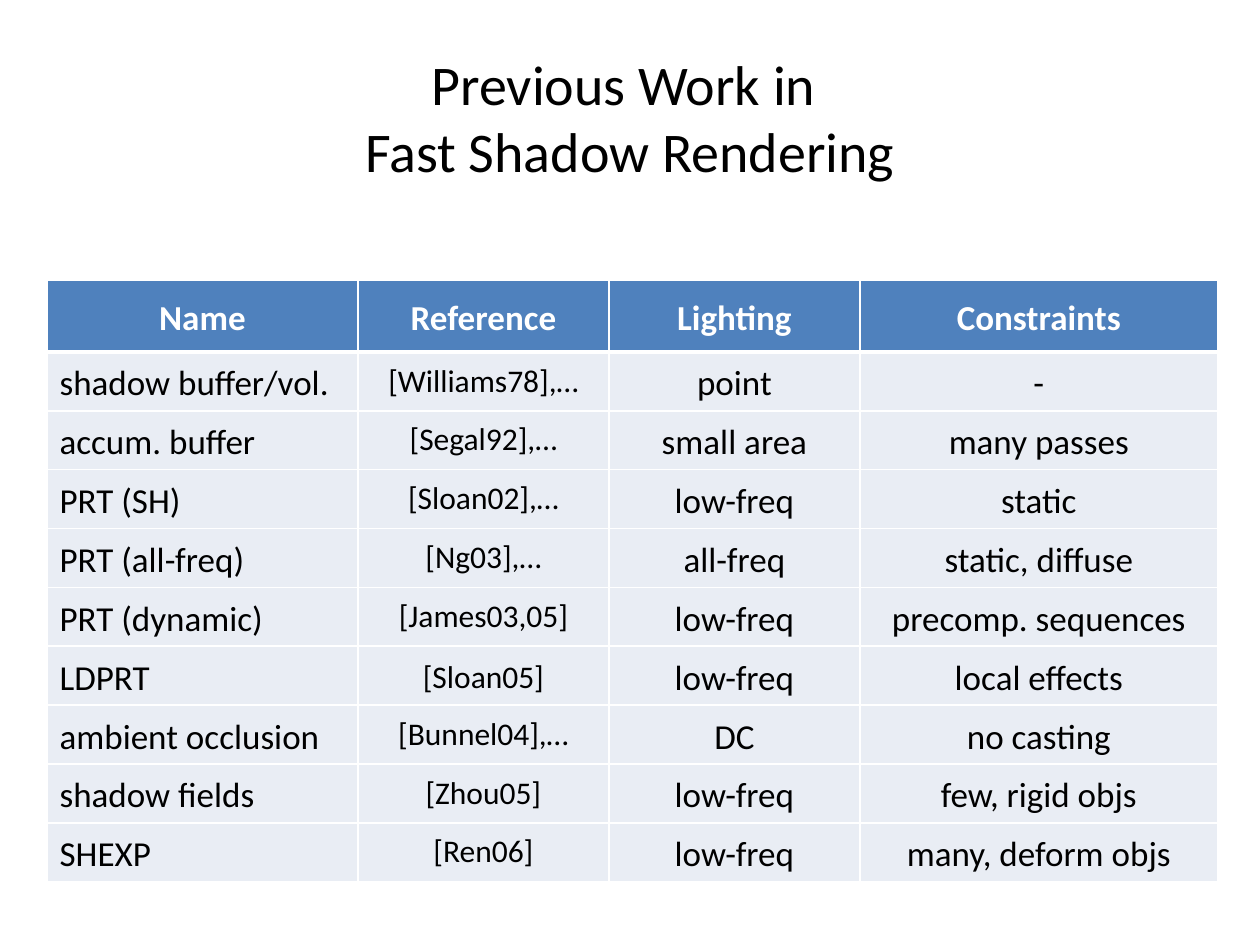
from dataclasses import dataclass

import pptx
import pptx.dml.color
import pptx.enum.text
import pptx.oxml
import pptx.oxml.ns
import pptx.util

PX = pptx.util.Inches(1) // 126
FONT = "Calibri"
BLACK = pptx.dml.color.RGBColor(0x00, 0x00, 0x00)
WHITE = pptx.dml.color.RGBColor(0xFF, 0xFF, 0xFF)
BLUE = pptx.dml.color.RGBColor(0x4F, 0x81, 0xBD)
PALE = pptx.dml.color.RGBColor(0xE9, 0xED, 0xF4)
LEFT = pptx.enum.text.PP_ALIGN.LEFT
CENTER = pptx.enum.text.PP_ALIGN.CENTER
TOP = pptx.enum.text.MSO_ANCHOR.TOP
MIDDLE = pptx.enum.text.MSO_ANCHOR.MIDDLE


@dataclass(frozen=True)
class Method:
    name: str
    reference: str
    lighting: str
    constraints: str
    height: int = 55
    centred: int = 0

    def texts(self) -> list[str]:
        return [self.name, self.reference, self.lighting, self.constraints]


HEADINGS = ["Name", "Reference", "Lighting", "Constraints"]
COLUMN_WIDTHS = [311, 251, 251, 358]
HEADER_HEIGHT = 72
METHODS = [
    Method("shadow buffer/vol.", "[Williams78],…", "point", "-"),
    Method("accum. buffer", "[Segal92],…", "small area", "many passes"),
    Method("PRT (SH)", "[Sloan02],…", "low-freq", "static"),
    Method("PRT (all-freq)", "[Ng03],…", "all-freq", "static, diffuse"),
    Method("PRT (dynamic)", "[James03,05]", "low-freq", "precomp. sequences"),
    Method("LDPRT", "[Sloan05]", "low-freq", "local effects", height=59, centred=3),
    Method("ambient occlusion", "[Bunnel04],…", "DC", "no casting"),
    Method("shadow fields", "[Zhou05]", "low-freq", "few, rigid objs"),
    Method("SHEXP", "[Ren06]", "low-freq", "many, deform objs"),
]


def put_text(tf, text: str, *, size=20, color=BLACK, bold=False, align=CENTER,
             line_spacing=None, gap=None) -> None:
    tf.word_wrap = True
    p = tf.paragraphs[0]
    p.alignment = align
    p.line_spacing = line_spacing
    if gap is not None:
        p.space_before = p.space_after = pptx.util.Pt(gap)
    for i, line in enumerate(text.split("\n")):
        if i:
            p.add_line_break()
        r = p.add_run()
        r.text = line
        r.font.name = FONT
        r.font.size = pptx.util.Pt(size)
        r.font.bold = bold
        r.font.color.rgb = color


def set_borders(cell, *, top: int = 1, bottom: int = 1) -> None:
    tc_pr = cell._tc.get_or_add_tcPr()
    for side, width in (("L", 1), ("R", 1), ("T", top), ("B", bottom)):
        tc_pr.append(pptx.oxml.parse_xml(
            f'<a:ln{side} {pptx.oxml.ns.nsdecls("a")} w="{pptx.util.Pt(width)}">'
            f'<a:solidFill><a:srgbClr val="{WHITE}"/></a:solidFill></a:ln{side}>'))


def fill_cell(cell, text: str, *, fill, anchor=TOP, top=1, bottom=1, **text_format) -> None:
    set_borders(cell, top=top, bottom=bottom)
    cell.fill.solid()
    cell.fill.fore_color.rgb = fill
    cell.vertical_anchor = anchor
    put_text(cell.text_frame, text, line_spacing=1.1, gap=6, **text_format)


def add_title(slide, text: str) -> None:
    sp = slide.shapes.add_textbox(63 * PX, 38 * PX, 1134 * PX, 157 * PX)
    sp.text_frame.vertical_anchor = MIDDLE
    put_text(sp.text_frame, text, size=32)


def add_methods_table(slide, methods: list[Method]) -> None:
    heights = [HEADER_HEIGHT] + [m.height for m in methods]
    table = slide.shapes.add_table(
        len(heights), len(COLUMN_WIDTHS), 47 * PX, 280 * PX,
        sum(COLUMN_WIDTHS) * PX, sum(heights) * PX).table
    for column, width in zip(table.columns, COLUMN_WIDTHS):
        column.width = width * PX
    for row, height in zip(table.rows, heights):
        row.height = height * PX
    for col, heading in enumerate(HEADINGS):
        fill_cell(table.cell(0, col), heading, fill=BLUE, anchor=MIDDLE,
                  bottom=3, color=WHITE, bold=True)
    for row, method in enumerate(methods, start=1):
        for col, text in enumerate(method.texts()):
            fill_cell(table.cell(row, col), text, fill=PALE,
                      anchor=MIDDLE if col < method.centred else TOP,
                      top=3 if row == 1 else 1,
                      size=18 if col == 1 else 20,
                      align=LEFT if col == 0 else CENTER)


def main() -> None:
    prs = pptx.Presentation()
    prs.slide_width = 1260 * PX
    prs.slide_height = 945 * PX
    slide = prs.slides.add_slide(prs.slide_layouts[6])
    add_title(slide, "Previous Work in \nFast Shadow Rendering")
    add_methods_table(slide, METHODS)
    prs.save("out.pptx")


if __name__ == "__main__":
    main()
